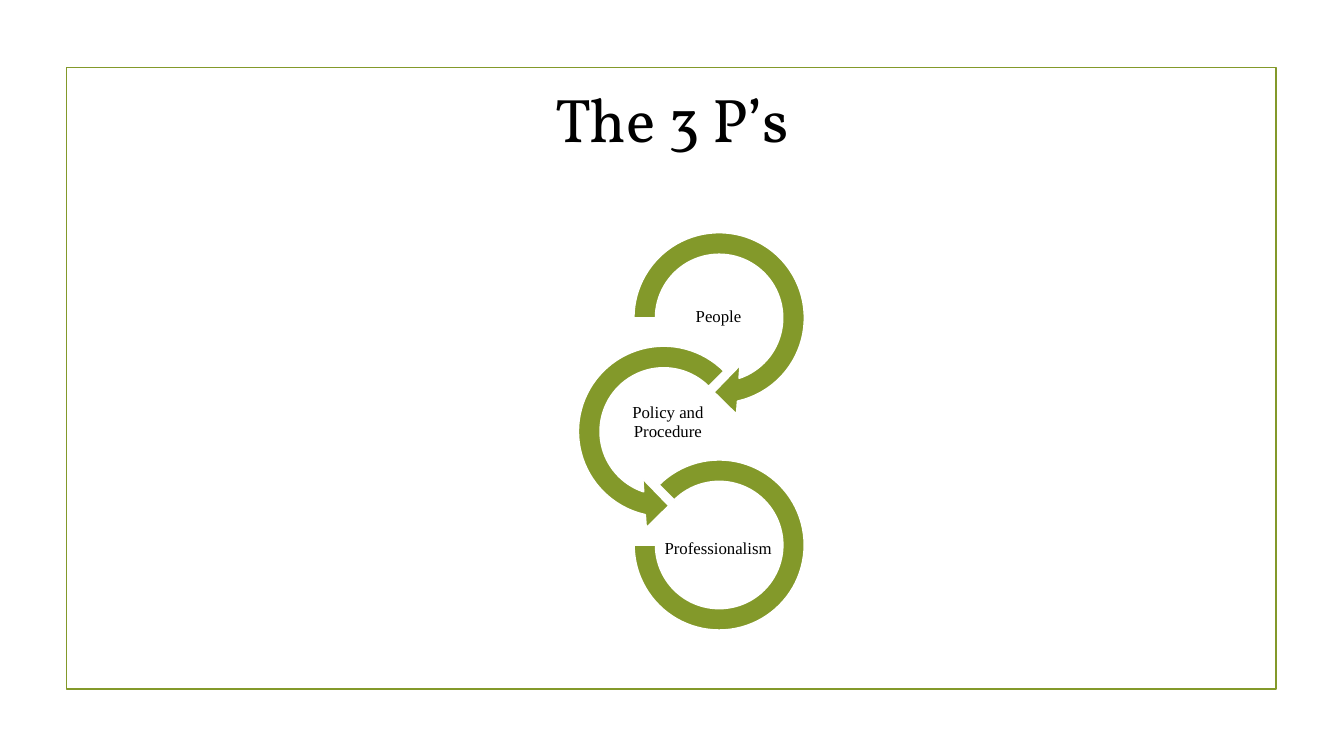
from dataclasses import dataclass

from pptx import Presentation
from pptx.dml.color import RGBColor
from pptx.enum.shapes import MSO_SHAPE
from pptx.enum.text import MSO_ANCHOR, PP_ALIGN
from pptx.util import Pt

RECT = MSO_SHAPE.RECTANGLE
ARROW_RIGHT = MSO_SHAPE.CIRCULAR_ARROW
ARROW_LEFT = MSO_SHAPE.LEFT_CIRCULAR_ARROW
ARC = MSO_SHAPE.BLOCK_ARC
MIDDLE = MSO_ANCHOR.MIDDLE
CENTER = PP_ALIGN.CENTER


@dataclass(frozen=True)
class Theme:
    green: RGBColor = RGBColor(0x83, 0x99, 0x2A)
    white: RGBColor = RGBColor(0xFF, 0xFF, 0xFF)
    black: RGBColor = RGBColor(0, 0, 0)
    title_font: str = "Vollkorn"
    label_font: str = "Times New Roman"
    title_size: float = 44
    label_size: float = 12
    line: float = 1.25


THEME = Theme()

# Content: label, ring shape, ring diameter, adjustments,
# label size, label offset from the ring centre
TITLE = "The 3 P’s"
STEPS = [
    ("People", ARROW_RIGHT, 141.8, (0.11, 11.423, 45, 108, 0.125),
     (146.9, 81.4), (-0.4, -0.6)),
    ("Policy and Procedure", ARROW_LEFT, 141.8, (0.11, 11.423, 63, 189, 0.125),
     (78.5, 39.6), (3, -6.4)),
    ("Professionalism", ARC, 121.7, (135, 108, 0.127),
     (78.5, 39.6), (-0.7, 2.8)),
]

# Layout in points: ring centres zigzag down the slide
SLIDE = (960, 540)
FRAME = (47.5, 48.2, 864, 444.2)
TITLE_BOX = (48.2, 30.2, 864, 108)
RING_X = (513.7, 474.1)
RING_TOP_Y, RING_STEP = 227.1, 81.1
INSET = 0.7


def add_outlined(s, kind, box, line_color):
    sp = s.shapes.add_shape(kind, *map(Pt, box))
    sp.shadow.inherit = False
    sp.line.color.rgb = line_color
    sp.line.width = Pt(THEME.line)
    return sp


def centered(cx, cy, w, h):
    return cx - w / 2, cy - h / 2, w, h


def write(tf, text, font, size):
    tf.word_wrap = True
    tf.vertical_anchor = MIDDLE
    tf.text = text
    p = tf.paragraphs[0]
    p.alignment = CENTER
    p.font.name = font
    p.font.size = Pt(size)
    p.font.color.rgb = THEME.black
    return p


def add_step(s, index, step):
    text, kind, diameter, adjustments, label_size, (dx, dy) = step
    cx, cy = RING_X[index % 2], RING_TOP_Y + index * RING_STEP

    # Ring
    ring = add_outlined(s, kind, centered(cx, cy, diameter, diameter), THEME.white)
    ring.fill.solid()
    ring.fill.fore_color.rgb = THEME.green
    for i, value in enumerate(adjustments):
        ring.adjustments[i] = value

    # Label
    box = centered(cx + dx, cy + dy, *label_size)
    tf = s.shapes.add_textbox(*map(Pt, box)).text_frame
    tf.margin_left = tf.margin_right = tf.margin_top = tf.margin_bottom = Pt(INSET)
    write(tf, text, THEME.label_font, THEME.label_size).line_spacing = 0.9


def main():
    prs = Presentation()
    prs.slide_width, prs.slide_height = map(Pt, SLIDE)
    s = prs.slides.add_slide(prs.slide_layouts[5])

    # Frame
    add_outlined(s, RECT, FRAME, THEME.green).fill.background()

    # Title
    title = s.shapes.title
    title.left, title.top, title.width, title.height = map(Pt, TITLE_BOX)
    write(title.text_frame, TITLE, THEME.title_font, THEME.title_size)

    # Chain of rings
    for index, step in enumerate(STEPS):
        add_step(s, index, step)

    prs.save("out.pptx")


if __name__ == "__main__":
    main()
